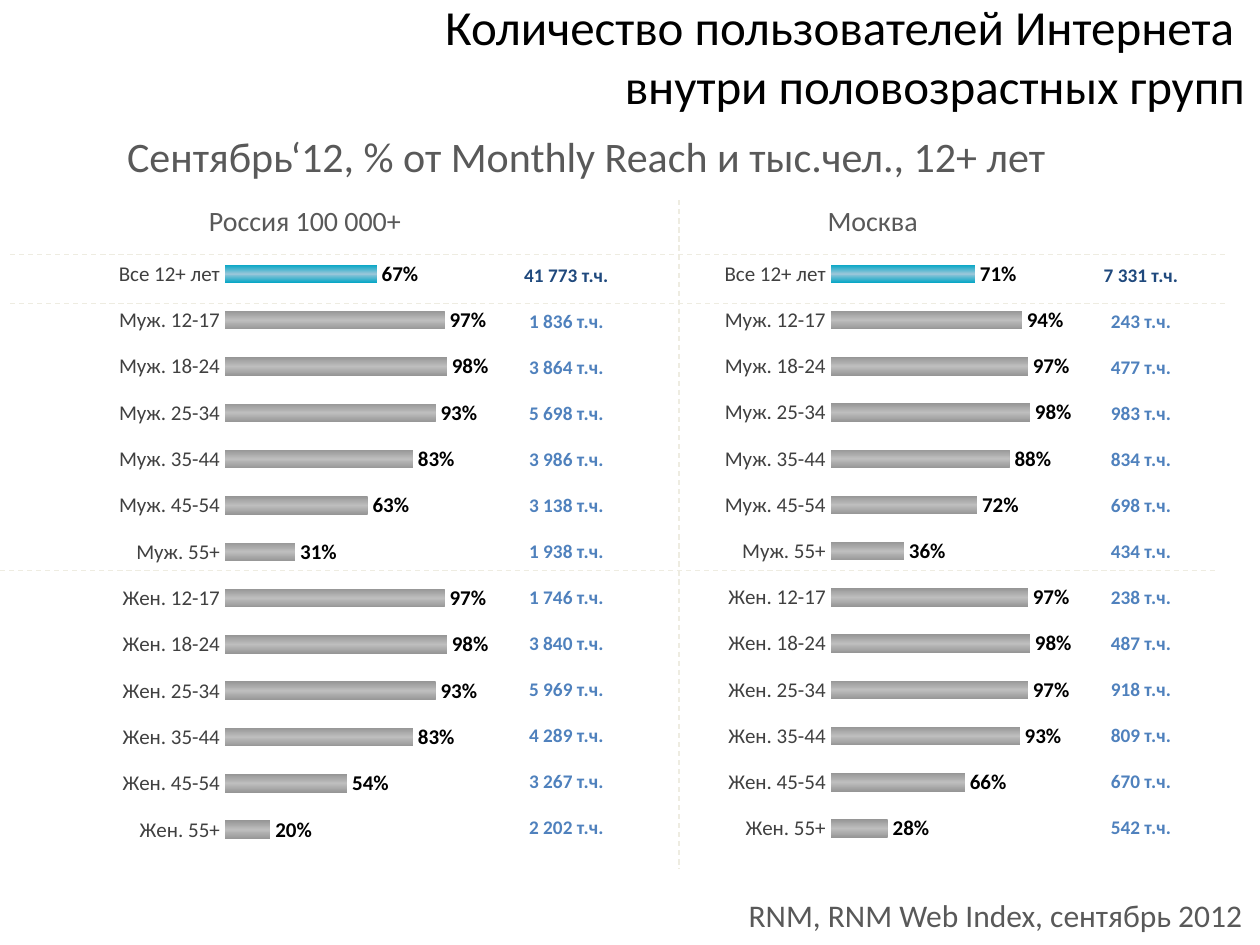
import pptx
import pptx.chart.data
import pptx.dml.color
import pptx.enum.chart
import pptx.enum.dml
import pptx.enum.shapes
import pptx.enum.text
import pptx.oxml
import pptx.oxml.ns
import pptx.util
from lxml import etree

Inches, Pt = pptx.util.Inches, pptx.util.Pt
RGBColor = pptx.dml.color.RGBColor
ALIGN = pptx.enum.text.PP_ALIGN
ANCHOR = pptx.enum.text.MSO_ANCHOR

BLACK = RGBColor(0x00, 0x00, 0x00)
GRAY = RGBColor(0x59, 0x59, 0x59)
AXIS_GRAY = RGBColor(0x40, 0x40, 0x40)
NAVY = RGBColor(0x1F, 0x49, 0x7D)
BLUE = RGBColor(0x4F, 0x81, 0xBD)
DIVIDER = RGBColor(0xEE, 0xEC, 0xE1)
BAR_GRAY = RGBColor(0x96, 0x96, 0x96), RGBColor(0xBE, 0xBE, 0xBE)
BAR_CYAN = RGBColor(0x00, 0xA5, 0xC5), RGBColor(0x98, 0xC6, 0xD9)

# Content
TITLE = "Количество пользователей Интернета \vвнутри половозрастных групп"
SUBTITLE = "Сентябрь‘12, % от Monthly Reach и тыс.чел., 12+ лет"
SOURCE = "RNM, RNM Web Index, сентябрь 2012"
AGES = ["12-17", "18-24", "25-34", "35-44", "45-54", "55+"]
GROUPS = ["Все 12+ лет"] + [f"{sex} {age}" for sex in ("Муж.", "Жен.") for age in AGES]

REGIONS = [
    dict(name="Россия 100 000+", heading_left=1.56,
         chart_box=(0.8, 1.99, 3.96, 4.78), plot=(0.249, 0.454), table_left=4.06,
         percents=[67, 97, 98, 93, 83, 63, 31, 97, 98, 93, 83, 54, 20],
         thousands=["41 773", "1 836", "3 864", "5 698", "3 986", "3 138", "1 938",
                    "1 746", "3 840", "5 969", "4 289", "3 267", "2 202"]),
    dict(name="Москва", heading_left=6.47,
         chart_box=(5.55, 1.99, 3.65, 4.77), plot=(0.286, 0.442), table_left=8.62,
         percents=[71, 94, 97, 98, 88, 72, 36, 97, 98, 97, 93, 66, 28],
         thousands=["7 331", "243", "477", "983", "834", "698", "434",
                    "238", "487", "918", "809", "670", "542"]),
]

# Divider ends: x1, y1, x2, y2
DIVIDERS = [(0.08, 2.41, 9.72, 2.41), (5.39, 1.59, 5.39, 6.9),
            (0, 4.53, 9.64, 4.53), (0.08, 2.02, 9.72, 2.02)]
TABLE_TOP, TABLE_WIDTH, TABLE_HEIGHT = 2, 0.87, 4.75
NO_GRID_STYLE = "{2D5ABB26-0587-4C30-8999-92F81FD0307C}"


def style_font(font, size, color, bold=False):
    font.name, font.size, font.bold = "Calibri", Pt(size), bold
    font.color.rgb = color


def write_text(frame, text, size=18, color=GRAY, bold=False, align=ALIGN.LEFT):
    frame.text = text
    frame.word_wrap = True
    paragraph = frame.paragraphs[0]
    paragraph.alignment = align
    for run in paragraph.runs:
        style_font(run.font, size, color, bold)


def add_text(slide, box, text, **text_format):
    shape = slide.shapes.add_textbox(*map(Inches, box))
    write_text(shape.text_frame, text, **text_format)


def add_divider(slide, ends):
    connector = slide.shapes.add_connector(
        pptx.enum.shapes.MSO_CONNECTOR.STRAIGHT, *map(Inches, ends))
    connector.line.color.rgb = DIVIDER
    connector.line.width = Pt(0.75)
    connector.line.dash_style = pptx.enum.dml.MSO_LINE.DASH
    etree.SubElement(connector._element.spPr, pptx.oxml.ns.qn("a:effectLst"))


def fill_gradient(chart_format, colors):
    """Vertical gradient: edge colour, middle colour, edge colour."""
    edge, middle = colors
    stops = "".join(f'<a:gs pos="{position}"><a:srgbClr val="{color}"/></a:gs>'
                    for position, color in ((0, edge), (50000, middle), (100000, edge)))
    chart_format.fill.gradient()
    gradient = chart_format._element.spPr.find(pptx.oxml.ns.qn("a:gradFill"))
    new_gradient = pptx.oxml.parse_xml(
        f'<a:gradFill {pptx.oxml.ns.nsdecls("a")} rotWithShape="1"><a:gsLst>{stops}</a:gsLst>'
        '<a:lin ang="5400000" scaled="0"/></a:gradFill>')
    gradient.getparent().replace(gradient, new_gradient)


def set_plot_area(chart, left, width):
    values = dict(x=left, y=0.002, w=width, h=1)
    sizes = "".join(f'<c:{name} val="{value}"/>' for name, value in values.items())
    layout = pptx.oxml.parse_xml(
        f'<c:layout {pptx.oxml.ns.nsdecls("c")}><c:manualLayout><c:layoutTarget val="inner"/>'
        f'<c:xMode val="edge"/><c:yMode val="edge"/>{sizes}</c:manualLayout></c:layout>')
    plot_area = chart._chartSpace.chart.plotArea
    for old_layout in plot_area.findall(pptx.oxml.ns.qn("c:layout")):
        plot_area.remove(old_layout)
    plot_area.insert(0, layout)


def add_bars(slide, region):
    data = pptx.chart.data.CategoryChartData()
    data.categories = GROUPS
    data.add_series("Series 1", region["percents"])
    chart = slide.shapes.add_chart(pptx.enum.chart.XL_CHART_TYPE.BAR_CLUSTERED,
                                   *map(Inches, region["chart_box"]), data).chart
    chart.has_legend = chart.has_title = False
    chart.font.name, chart.font.size = "Arial", Pt(10)
    chart.font.color.rgb = BLACK
    set_plot_area(chart, *region["plot"])

    for axis in (chart.category_axis, chart.value_axis):
        axis.major_tick_mark = axis.minor_tick_mark = pptx.enum.chart.XL_TICK_MARK.NONE
        axis.has_major_gridlines = False
        axis.format.line.fill.background()
    chart.category_axis.reverse_order = True
    style_font(chart.category_axis.tick_labels.font, 12, AXIS_GRAY)
    chart.value_axis.tick_label_position = pptx.enum.chart.XL_TICK_LABEL_POSITION.NONE
    chart.value_axis.minimum_scale, chart.value_axis.maximum_scale = 0, 100
    chart.value_axis.major_unit = 50

    plot = chart.plots[0]
    plot.gap_width, plot.vary_by_categories = 150, False
    series = plot.series[0]
    fill_gradient(series.format, BAR_GRAY)
    fill_gradient(series.points[0].format, BAR_CYAN)
    labels = series.data_labels
    labels.show_value = True
    labels.number_format, labels.number_format_is_linked = '0"%"', False
    labels.position = pptx.enum.chart.XL_LABEL_POSITION.OUTSIDE_END
    style_font(labels.font, 12, BLACK, bold=True)


def add_counts(slide, region):
    counts = region["thousands"]
    table = slide.shapes.add_table(
        len(counts), 1, Inches(region["table_left"]), Inches(TABLE_TOP),
        Inches(TABLE_WIDTH), Inches(TABLE_HEIGHT)).table
    table.first_row = table.horz_banding = False
    table._tbl.tblPr.find(pptx.oxml.ns.qn("a:tableStyleId")).text = NO_GRID_STYLE
    for index, count in enumerate(counts):
        cell = table.cell(index, 0)
        cell.fill.background()
        cell.vertical_anchor = ANCHOR.MIDDLE
        cell.margin_left = cell.margin_right = cell.margin_top = Inches(0.01)
        cell.margin_bottom = 0
        write_text(cell.text_frame, f"{count} т.ч.", size=11, bold=True,
                   color=BLUE if index else NAVY, align=ALIGN.CENTER)


def main():
    presentation = pptx.Presentation()
    presentation.slide_width, presentation.slide_height = Inches(10), Inches(7.5)
    slide = presentation.slides.add_slide(presentation.slide_layouts[5])

    # Title, subtitle and source
    title = slide.shapes.title
    title.left, title.top, title.width, title.height = map(Inches, (2.09, 0.13, 7.89, 0.62))
    write_text(title.text_frame, TITLE, size=28, color=BLACK, align=ALIGN.RIGHT)
    title.text_frame.vertical_anchor = ANCHOR.MIDDLE
    title.text_frame.auto_size = pptx.enum.text.MSO_AUTO_SIZE.NONE
    add_text(slide, (0.91, 0.99, 8.91, 0.47), SUBTITLE, size=24)
    add_text(slide, (5.42, 7.06, 4.54, 0.5), SOURCE, align=ALIGN.RIGHT)

    # Dashed dividers
    for ends in DIVIDERS:
        add_divider(slide, ends)

    # One heading, bar chart and column of counts per region
    for region in REGIONS:
        add_text(slide, (region["heading_left"], 1.57, 2.12, 0.37), region["name"], size=16)
        add_bars(slide, region)
        add_counts(slide, region)

    presentation.save("out.pptx")


if __name__ == "__main__":
    main()
